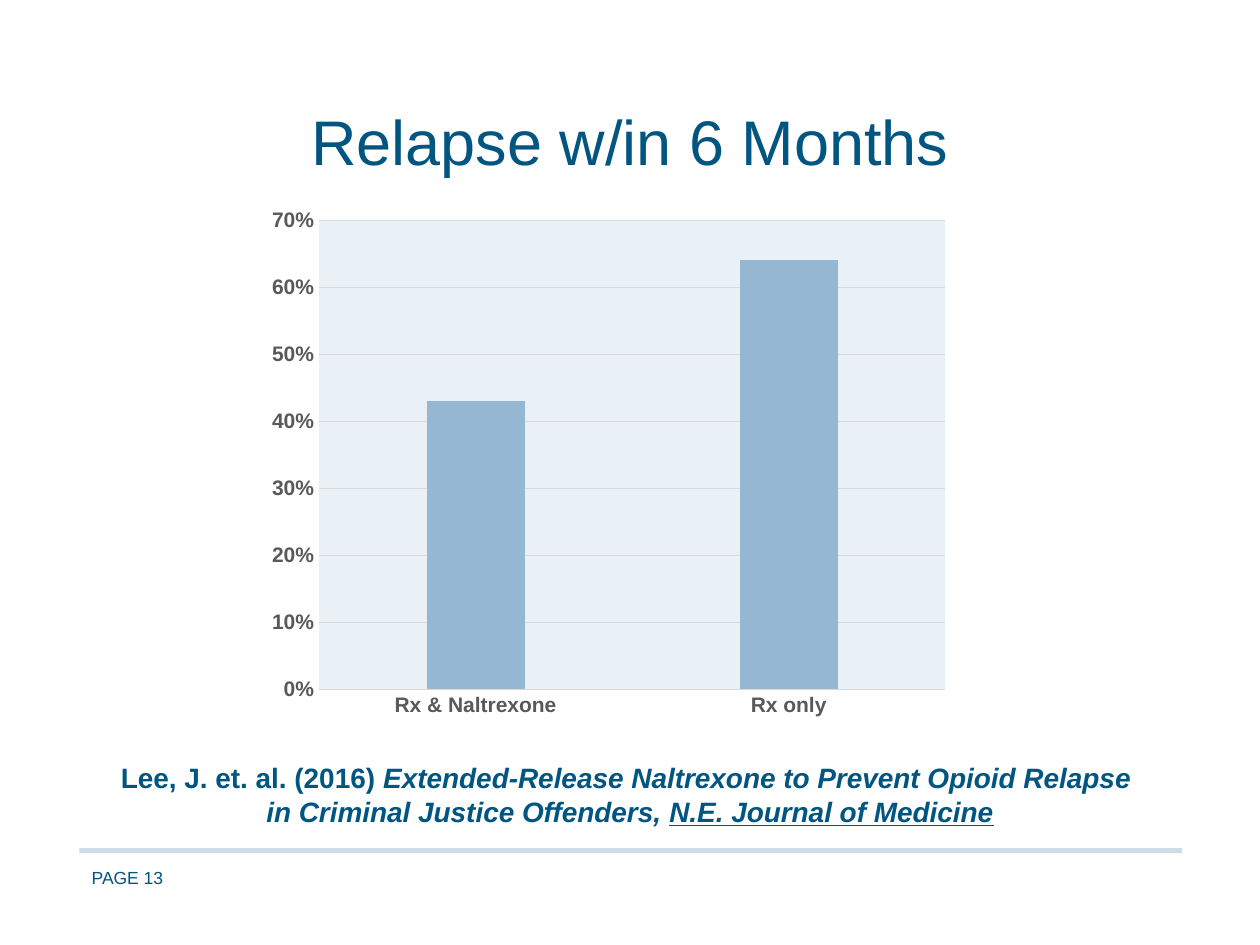
from dataclasses import dataclass

from lxml import etree
from pptx import Presentation, util as u
from pptx.chart.data import CategoryChartData
from pptx.dml.color import RGBColor
from pptx.enum import chart as charts, shapes, text
from pptx.oxml import parse_xml
from pptx.oxml.ns import nsdecls, qn

WIDTH, HEIGHT = 10, 7.5
FONT, NAVY, GREY, RULE = "Arial", "005581", "595959", "D9D9D9"


@dataclass(frozen=True)
class Box:
    """Hold a rectangle as shares of the slide's size."""

    left: float
    top: float
    width: float
    height: float

    def lengths(self) -> tuple:
        """Return left, top, width and height as slide lengths."""
        return (u.Inches(self.left * WIDTH), u.Inches(self.top * HEIGHT),
                u.Inches(self.width * WIDTH), u.Inches(self.height * HEIGHT))


@dataclass(frozen=True)
class Piece:
    """Hold a stretch of text with its emphasis."""

    words: str
    italic: bool = False
    underline: bool = False
    breaks: bool = False


TITLE = Box(0.05, 0.012, 0.9, 0.176)
CITATION = Box(0.05, 0.7, 0.9, 0.176)
CHART = Box(0.142, 0.077, 0.767, 0.75)
FOOTER = Box(0.063, 0.917, 0.106, 0.056)
PLOT = Box(0.145, 0.208, 0.648, 0.662)
RELAPSE = {"Rx & Naltrexone": 0.43, "Rx only": 0.64}
SOURCE = [
    Piece("Lee, J. et. al. (2016) "),
    Piece("Extended-Release Naltrexone to Prevent Opioid Relapse ", italic=True, breaks=True),
    Piece("in Criminal Justice Offenders, ", italic=True),
    Piece("N.E. Journal of Medicine", italic=True, underline=True),
]


def colour(value: str) -> RGBColor:
    """Turn a hex string into a colour."""
    return RGBColor.from_string(value)


def style(font, size: float, value: str, bold: bool = False) -> None:
    """Set the face, size, colour and weight of a font."""
    font.name, font.size, font.bold = FONT, u.Pt(size), bold
    font.color.rgb = colour(value)


def write(shape, box: Box, pieces: list[Piece], *, size: float, bold: bool = False,
          align=text.PP_ALIGN.CENTER, anchor=text.MSO_ANCHOR.BOTTOM, inset: float = 0) -> None:
    """Place a text shape and fill it with formatted pieces."""
    shape.left, shape.top, shape.width, shape.height = box.lengths()
    frame = shape.text_frame
    frame.word_wrap, frame.vertical_anchor = True, anchor
    frame.auto_size = text.MSO_AUTO_SIZE.NONE
    frame.margin_left = frame.margin_right = u.Inches(inset)
    frame.margin_top = frame.margin_bottom = 0
    paragraph = frame.paragraphs[0]
    paragraph.alignment = align
    for piece in pieces:
        run = paragraph.add_run()
        run.text = piece.words
        style(run.font, size, NAVY, bold)
        run.font.italic, run.font.underline = piece.italic, piece.underline
        if piece.breaks:
            paragraph.add_line_break()


def draw_rule(slide) -> None:
    """Draw the translucent line above the footer."""
    left, right, level = u.Inches(0.063 * WIDTH), u.Inches(0.938 * WIDTH), u.Inches(0.9 * HEIGHT)
    line = slide.shapes.add_connector(shapes.MSO_CONNECTOR.STRAIGHT, left, level, right, level)
    line.line.color.rgb, line.line.width = colour(NAVY), u.Pt(2.75)
    shape_properties = line._element.spPr
    fill = next(shape_properties.iter(qn("a:srgbClr")))
    etree.SubElement(fill, qn("a:alpha"), val="20000")
    etree.SubElement(shape_properties, qn("a:effectLst"))


def format_plot_area(chart, box: Box, fill: str) -> None:
    """Set the inner layout and the background of the plot area."""
    area = chart._chartSpace.chart.plotArea
    for old in area.findall(qn("c:layout")):
        area.remove(old)
    settings = {"layoutTarget": "inner", "xMode": "edge", "yMode": "edge",
                "x": box.left, "y": box.top, "w": box.width, "h": box.height}
    layout = etree.Element(qn("c:layout"))
    manual = etree.SubElement(layout, qn("c:manualLayout"))
    for name, value in settings.items():
        etree.SubElement(manual, qn(f"c:{name}"), val=str(value))
    area.insert(0, layout)
    area.append(parse_xml(f'<c:spPr {nsdecls("c", "a")}><a:solidFill>'
                          f'<a:srgbClr val="{fill}"/></a:solidFill></c:spPr>'))


def draw_chart(slide) -> None:
    """Draw the columns of relapse rates."""
    data = CategoryChartData(number_format="0%")
    data.categories = list(RELAPSE)
    data.add_series("Series 1", list(RELAPSE.values()))
    chart = slide.shapes.add_chart(
        charts.XL_CHART_TYPE.COLUMN_CLUSTERED, *CHART.lengths(), data).chart
    chart.has_legend = chart.has_title = False
    style(chart.font, 10, "000000")
    plot = chart.plots[0]
    plot.gap_width, plot.overlap, plot.vary_by_categories = 219, -27, False
    series_fill = plot.series[0].format.fill
    series_fill.solid()
    series_fill.fore_color.rgb = colour("96B7D1")
    for axis in (chart.category_axis, chart.value_axis):
        axis.major_tick_mark = axis.minor_tick_mark = charts.XL_TICK_MARK.NONE
        style(axis.tick_labels.font, 12, GREY, bold=True)
    values = chart.value_axis
    values.minimum_scale, values.maximum_scale, values.major_unit = 0, 0.7, 0.1
    values.tick_labels.number_format = "0%"
    values.tick_labels.number_format_is_linked = False
    values.format.line.fill.background()
    values.has_major_gridlines = True
    for line in (chart.category_axis.format.line, values.major_gridlines.format.line):
        line.color.rgb, line.width = colour(RULE), u.Pt(0.75)
    format_plot_area(chart, PLOT, "EAF1F6")


def main() -> None:
    """Build the slide and save it."""
    presentation = Presentation()
    presentation.slide_width, presentation.slide_height = u.Inches(WIDTH), u.Inches(HEIGHT)
    slide = presentation.slides.add_slide(presentation.slide_layouts[5])
    write(slide.shapes.add_textbox(*FOOTER.lengths()), FOOTER, [Piece("PAGE 13")], size=10,
          align=text.PP_ALIGN.LEFT, anchor=text.MSO_ANCHOR.TOP, inset=0.1)
    draw_rule(slide)
    write(slide.shapes.title, TITLE, [Piece("Relapse w/in 6 Months")], size=36)
    draw_chart(slide)
    write(slide.shapes.add_textbox(*CITATION.lengths()), CITATION, SOURCE, size=16, bold=True)
    presentation.save("out.pptx")


if __name__ == "__main__":
    main()
